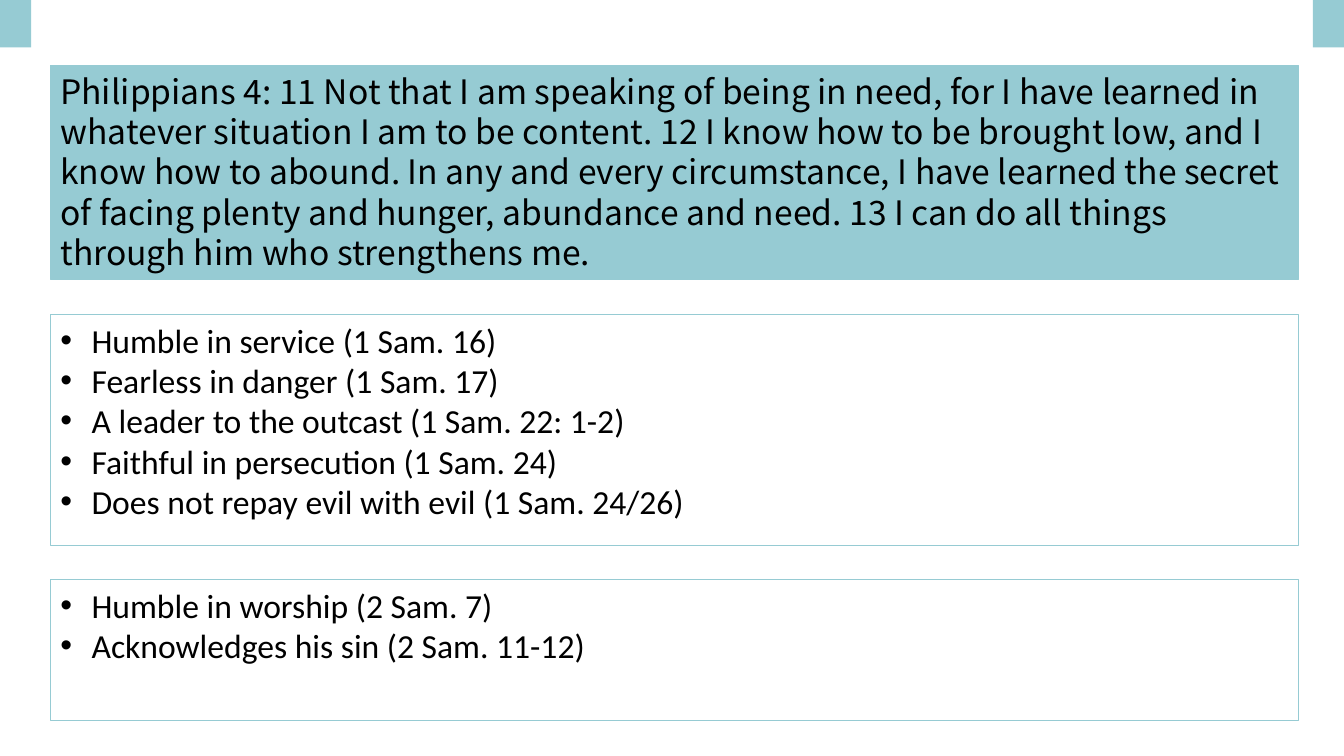
import pptx
import pptx.util
import pptx.dml.color
import pptx.enum.shapes
import pptx.enum.text
from lxml import etree

Inches, Pt = pptx.util.Inches, pptx.util.Pt

THEME = {
    "accent": pptx.dml.color.RGBColor.from_string("96CBD3"),
    "paper": pptx.dml.color.RGBColor.from_string("FFFFFF"),
    "ink": pptx.dml.color.RGBColor.from_string("000000"),
    "size": Pt(24),
    "verse_font": "Noto Sans CJK SC",
    "list_font": "Calibri",
}
WIDTH, HEIGHT = 13.33, 7.5
MARGIN, CONTENT_WIDTH = 0.5, 12.38
TAB_WIDTH, TAB_HEIGHT = 0.31, 0.47
INDENT = Inches(0.31)

VERSE = (
    "Philippians 4: 11 Not that I am speaking of being in need, for I have learned in "
    "whatever situation I am to be content. 12 I know how to be brought low, and I know "
    "how to abound. In any and every circumstance, I have learned the secret of facing "
    "plenty and hunger, abundance and need. 13 I can do all things through him who "
    "strengthens me."
)
EARLY_LIFE = [
    "Humble in service (1 Sam. 16)",
    "Fearless in danger (1 Sam. 17)",
    "A leader to the outcast (1 Sam. 22: 1-2)",
    "Faithful in persecution (1 Sam. 24)",
    "Does not repay evil with evil (1 Sam. 24/26)",
]
KINGSHIP = ["Humble in worship (2 Sam. 7)", "Acknowledges his sin (2 Sam. 11-12)"]

deck = pptx.Presentation()
deck.slide_width, deck.slide_height = Inches(WIDTH), Inches(HEIGHT)
slide = deck.slides.add_slide(deck.slide_layouts[6])


def add_panel(left, top, width, height, fill, line_width=None):
    """Add a flat rectangle, outlined in the accent colour if line_width is given."""
    panel = slide.shapes.add_shape(
        pptx.enum.shapes.MSO_SHAPE.RECTANGLE, *map(Inches, (left, top, width, height)))
    panel.shadow.inherit = False
    panel.fill.solid()
    panel.fill.fore_color.rgb = fill
    if line_width:
        panel.line.color.rgb = THEME["accent"]
        panel.line.width = Pt(line_width)
    else:
        panel.line.fill.background()
    return panel


def write(panel, lines, font, bullet=None, spacing=None):
    """Fill a panel with one left-aligned paragraph per line."""
    frame = panel.text_frame
    frame.word_wrap = True
    frame.vertical_anchor = pptx.enum.text.MSO_ANCHOR.TOP
    for index, line in enumerate(lines):
        paragraph = frame.add_paragraph() if index else frame.paragraphs[0]
        paragraph.alignment = pptx.enum.text.PP_ALIGN.LEFT
        paragraph.line_spacing = spacing
        run = paragraph.add_run()
        run.text = line
        run.font.name, run.font.size = font, THEME["size"]
        run.font.color.rgb = THEME["ink"]
        if bullet:
            properties = paragraph._p.get_or_add_pPr()
            properties.set("marL", str(INDENT))
            properties.set("indent", str(-INDENT))
            for tag, key, value in (("buFont", "typeface", "Arial"), ("buChar", "char", bullet)):
                etree.SubElement(properties, pptx.oxml.ns.qn(f"a:{tag}")).set(key, value)


for tab_left in (0, WIDTH - TAB_WIDTH):
    add_panel(tab_left, 0, TAB_WIDTH, TAB_HEIGHT, THEME["accent"])

verse = add_panel(MARGIN, 0.65, CONTENT_WIDTH, 2.12, THEME["accent"], 0.75)
write(verse, [VERSE], THEME["verse_font"], spacing=Pt(28.8))

for top, height, points in ((3.12, 2.29, EARLY_LIFE), (5.75, 1.4, KINGSHIP)):
    traits = add_panel(MARGIN, top, CONTENT_WIDTH, height, THEME["paper"], 1)
    write(traits, points, THEME["list_font"], bullet="•")

deck.save("out.pptx")
